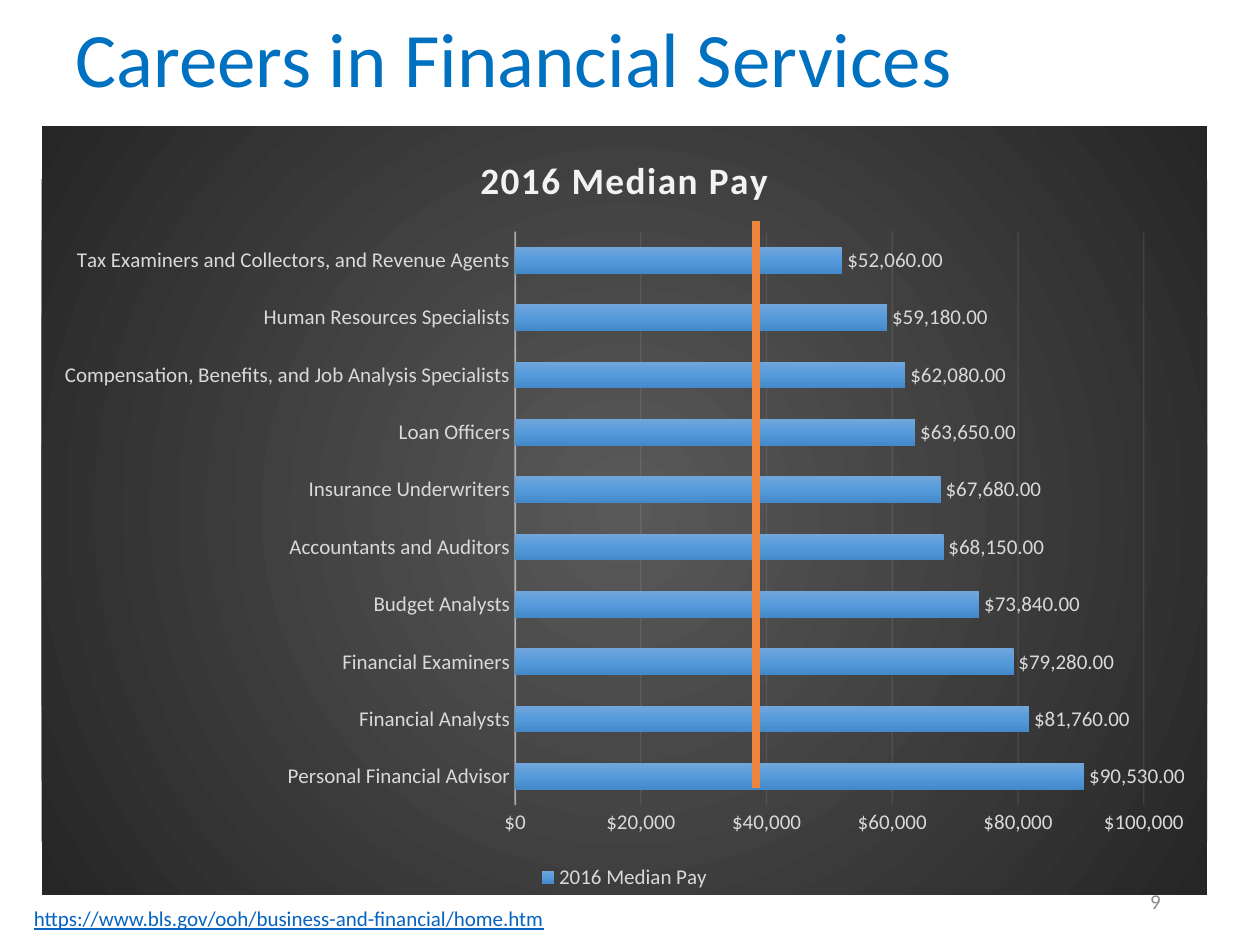
from lxml import etree
from pptx import Presentation
from pptx.chart.data import CategoryChartData
from pptx.dml.color import RGBColor
from pptx.enum.chart import XL_CHART_TYPE, XL_LABEL_POSITION, XL_LEGEND_POSITION, XL_TICK_MARK
from pptx.enum.shapes import MSO_CONNECTOR
from pptx.enum.text import MSO_ANCHOR, PP_ALIGN
from pptx.oxml import parse_xml
from pptx.oxml.ns import nsdecls, qn
from pptx.util import Emu, Pt

PX = 9144  # 100 px to the inch
FONT = "Calibri"
BLUE, ORANGE, GREY, LINK = "0070C0", "EE853E", "8C8C8C", "0563C1"
PALE, LABEL = "F2F2F2", "D9D9D9"

SERIES = "2016 Median Pay"
MEDIAN_PAY = {
    "Personal Financial Advisor": 90530,
    "Financial Analysts": 81760,
    "Financial Examiners": 79280,
    "Budget Analysts": 73840,
    "Accountants and Auditors": 68150,
    "Insurance Underwriters": 67680,
    "Loan Officers": 63650,
    "Compensation, Benefits, and Job Analysis Specialists": 62080,
    "Human Resources Specialists": 59180,
    "Tax Examiners and Collectors, and Revenue Agents": 52060,
}


def px(*lengths):
    return [Emu(length * PX) for length in lengths]


def color(value):
    return RGBColor.from_string(value)


def gradient(stops, direction):
    """Gradient fill from (percent, colour) stops and a direction element."""
    marks = "".join(
        f'<a:gs pos="{percent * 1000}"><a:srgbClr val="{value}"/></a:gs>'
        for percent, value in stops)
    return parse_xml(f'<a:gradFill {nsdecls("a")} rotWithShape="1">'
                     f'<a:gsLst>{marks}</a:gsLst>{direction}</a:gradFill>')


class SlideBuilder:
    def __init__(self, deck):
        self.slide = deck.slides.add_slide(deck.slide_layouts[6])

    def style(self, font, size, value, bold=False):
        font.name, font.size, font.bold = FONT, Pt(size), bold
        font.color.rgb = color(value)

    def text(self, area, words, size, value, anchor=MSO_ANCHOR.MIDDLE,
             align=PP_ALIGN.LEFT, underline=False, spacing=None):
        frame = self.slide.shapes.add_textbox(*px(*area)).text_frame
        frame.word_wrap = True
        frame.vertical_anchor = anchor
        para = frame.paragraphs[0]
        para.alignment = align
        para.line_spacing = spacing
        span = para.add_run()
        span.text = words
        self.style(span.font, size, value)
        span.font.underline = underline

    def line(self, start, end, value, width):
        line = self.slide.shapes.add_connector(
            MSO_CONNECTOR.STRAIGHT, *px(*start), *px(*end))
        line.line.color.rgb = color(value)
        line.line.width = Pt(width)
        etree.SubElement(line._element.spPr, qn("a:effectLst"))

    def faint_line(self, chart, line, where, width, opacity):
        line.color.rgb = color(PALE)
        line.width = Pt(width)
        for paint in chart.element.xpath(f".//{where}//a:ln//a:srgbClr"):
            etree.SubElement(paint, qn("a:alpha"), val=str(opacity * 1000))

    def bar_chart(self, area, name, values):
        data = CategoryChartData()
        data.categories = list(values)
        data.add_series(name, list(values.values()))
        chart = self.slide.shapes.add_chart(
            XL_CHART_TYPE.BAR_CLUSTERED, *px(*area), data).chart
        self.style(chart.font, 10, "000000")

        # Dark radial background
        back = parse_xml(f'<c:spPr {nsdecls("c", "a")}><a:ln><a:noFill/></a:ln></c:spPr>')
        back.insert(0, gradient(
            [(0, "595959"), (100, "262626")],
            '<a:path path="circle"><a:fillToRect l="50000" t="50000" r="50000" b="50000"/></a:path>'))
        chart.element.find(qn("c:chart")).addnext(back)

        # Title and legend
        chart.has_title = True
        span = chart.chart_title.text_frame.paragraphs[0].add_run()
        span.text = name
        self.style(span.font, 21.3, PALE, bold=True)
        span.font._element.set("spc", "100")
        chart.has_legend = True
        chart.legend.position = XL_LEGEND_POSITION.BOTTOM
        chart.legend.include_in_layout = False
        self.style(chart.legend.font, 12, LABEL)

        # Axes
        for axis in (chart.category_axis, chart.value_axis):
            axis.major_tick_mark = axis.minor_tick_mark = XL_TICK_MARK.NONE
            self.style(axis.tick_labels.font, 12, LABEL)
        self.faint_line(chart, chart.category_axis.format.line, "c:catAx", 1, 54)
        amounts = chart.value_axis
        amounts.tick_labels.number_format = '"$"#,##0'
        amounts.tick_labels.number_format_is_linked = False
        amounts.format.line.fill.background()
        self.faint_line(chart, amounts.major_gridlines.format.line,
                        "c:majorGridlines", 0.75, 10)

        # Bars and their labels
        plot = chart.plots[0]
        plot.gap_width, plot.overlap = 115, -20
        plot.vary_by_categories = False
        plot.series[0].format.fill.solid()
        solid = chart.element.xpath(".//c:ser/c:spPr/a:solidFill")[0]
        solid.getparent().replace(solid, gradient(
            [(0, "71A6DB"), (50, "559BDB"), (100, "448ACA")],
            '<a:lin ang="5400000" scaled="0"/>'))
        labels = plot.series[0].data_labels
        labels.show_value = True
        labels.position = XL_LABEL_POSITION.OUTSIDE_END
        labels.number_format = '"$"#,##0.00'
        labels.number_format_is_linked = False
        self.style(labels.font, 12, LABEL)


def main():
    deck = Presentation()
    deck.slide_width, deck.slide_height = px(1000, 750)
    page = SlideBuilder(deck)

    # Heading
    page.text((50, -1, 862, 101), "Careers in Financial Services", 44, BLUE, spacing=0.9)

    # Pay chart with its marker line
    page.bar_chart((33, 100, 925, 610), SERIES, MEDIAN_PAY)
    page.line((600, 625), (600, 175), ORANGE, 5)

    # Page number and source
    page.text((706, 695, 225, 40), "9", 12, GREY, align=PP_ALIGN.RIGHT)
    page.text((17, 714, 733, 30), "https://www.bls.gov/ooh/business-and-financial/home.htm",
              12, LINK, anchor=MSO_ANCHOR.TOP, underline=True)

    deck.save("out.pptx")


if __name__ == "__main__":
    main()
